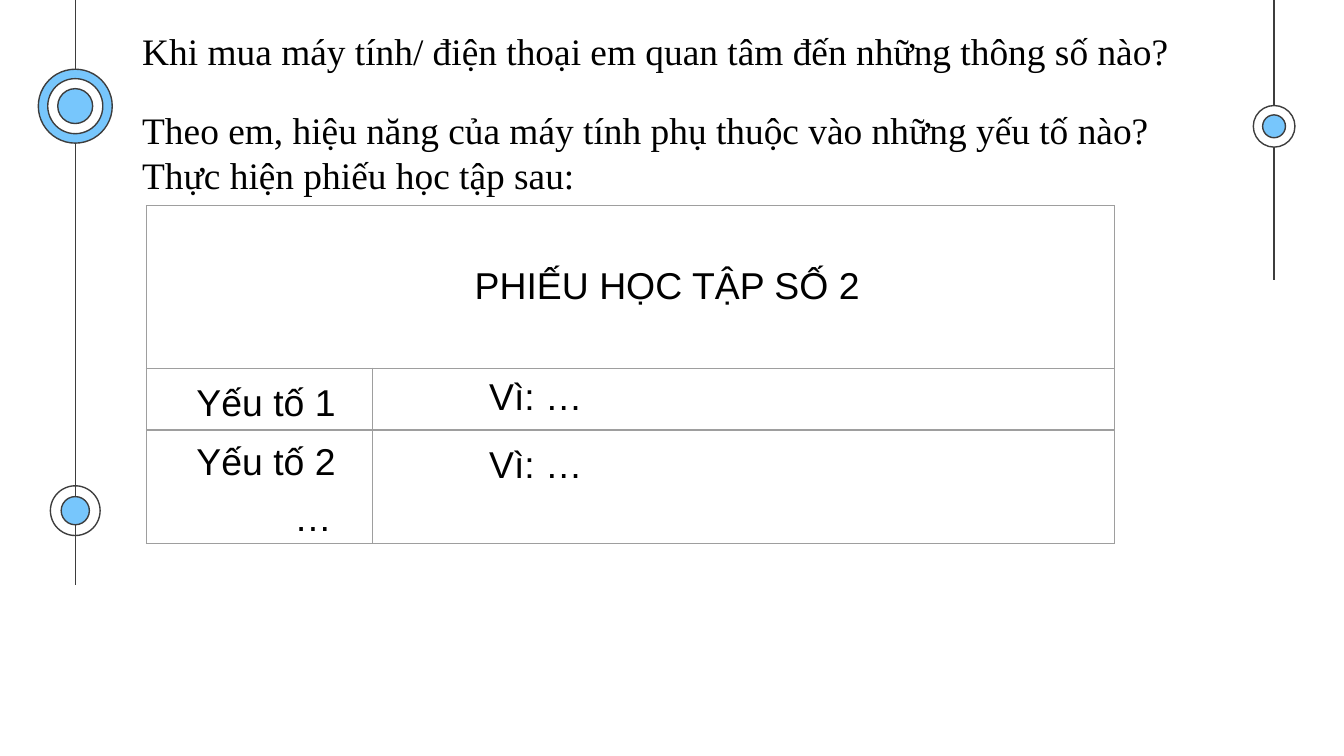
from lxml import etree
from pptx import Presentation
from pptx.dml.color import RGBColor
from pptx.enum.shapes import MSO_CONNECTOR as CONNECTOR, MSO_SHAPE as SHAPE
from pptx.enum.text import MSO_ANCHOR as ANCHOR, PP_ALIGN as ALIGN
from pptx.oxml.ns import qn
from pptx.util import Inches, Pt

INK, BLUE, WHITE, GREY = "3D3D3D", "77C6FC", "FFFFFF", "9E9E9E"


def color(value):
    return RGBColor.from_string(value)


def write(frame, text, font="Arial", align=ALIGN.LEFT, left=0, indent=0,
          spacing=None, before=0, first=True):
    """Fill the first paragraph of the frame, or append one if first is False."""
    paragraph = frame.paragraphs[0] if first else frame.add_paragraph()
    paragraph.alignment = align
    paragraph.line_spacing = spacing
    paragraph.space_before = Pt(before)
    properties = paragraph._p.get_or_add_pPr()
    properties.set("marL", str(Inches(left)))
    properties.set("indent", str(Inches(indent)))
    run = paragraph.add_run()
    run.text = text
    run.font.name = font
    run.font.size = Pt(20)
    run.font.bold = False
    run.font.color.rgb = color("000000")


prs = Presentation()
prs.slide_width = Inches(10)
prs.slide_height = Inches(10 * 9 / 16)
slide = prs.slides.add_slide(prs.slide_layouts[6])
shapes = slide.shapes

# Vertical rails
for x, bottom in [(0.56, 4.35), (9.48, 2.08)]:
    rail = shapes.add_connector(CONNECTOR.STRAIGHT, Inches(x), 0, Inches(x), Inches(bottom))
    rail.line.color.rgb = color(INK)
    rail.line.width = Pt(0.75)
    etree.SubElement(rail._element.spPr, qn("a:effectLst"))

# Concentric rings: centre x, centre y, then (diameter, fill) from the outside in
targets = [
    (0.56, 3.8, [(0.37, None), (0.21, BLUE)]),
    (9.48, 0.94, [(0.31, WHITE), (0.17, BLUE)]),
    (0.56, 0.79, [(0.55, BLUE), (0.41, WHITE), (0.26, BLUE)]),
]
for x, y, rings in targets:
    for size, fill in rings:
        ring = shapes.add_shape(SHAPE.OVAL, Inches(x - size / 2), Inches(y - size / 2),
                                Inches(size), Inches(size))
        ring.shadow.inherit = False
        ring.line.color.rgb = color(INK)
        ring.line.width = Pt(0.75)
        if fill:
            ring.fill.solid()
            ring.fill.fore_color.rgb = color(fill)
        else:
            ring.fill.background()

# Questions
questions = [
    (0.16, 8.44, 0.44, ["Khi mua máy tính/ điện thoại em quan tâm đến những thông số nào?"]),
    (0.75, 7.96, 0.77, ["Theo em, hiệu năng của máy tính phụ thuộc vào những yếu tố nào?",
                        "Thực hiện phiếu học tập sau:"]),
]
for top, width, height, lines in questions:
    question = shapes.add_textbox(Inches(0.96), Inches(top), Inches(width), Inches(height))
    question.text_frame.word_wrap = True
    for i, line in enumerate(lines):
        write(question.text_frame, line, font="Times New Roman", first=i == 0)

# Worksheet
widths, heights = [1.68, 5.52], [1.21, 0.46, 0.84]
worksheet = shapes.add_table(3, 2, Inches(1.09), Inches(1.53),
                             Inches(sum(widths)), Inches(sum(heights))).table
worksheet.first_row = worksheet.horz_banding = False
for column, width in zip(worksheet.columns, widths):
    column.width = Inches(width)
for row, height in zip(worksheet.rows, heights):
    row.height = Inches(height)

for cell in worksheet.iter_cells():
    cell.margin_left = cell.margin_right = Inches(0.07)
    cell.margin_top = cell.margin_bottom = 0
    cell.vertical_anchor = ANCHOR.MIDDLE
    properties = cell._tc.get_or_add_tcPr()
    for side in ("lnL", "lnR", "lnT", "lnB"):
        border = etree.SubElement(properties, qn(f"a:{side}"), w=str(Pt(0.75)))
        border_fill = etree.SubElement(border, qn("a:solidFill"))
        etree.SubElement(border_fill, qn("a:srgbClr"), val=GREY)
    cell.fill.background()

heading = worksheet.cell(0, 0)
heading.merge(worksheet.cell(0, 1))
write(heading.text_frame, "PHIẾU HỌC TẬP SỐ 2", align=ALIGN.CENTER, left=0.5, indent=0.05)

for number in (1, 2):
    factor, reason = worksheet.cell(number, 0), worksheet.cell(number, 1)
    write(factor.text_frame, f"Yếu tố {number}", align=ALIGN.CENTER,
          left=0.5, indent=-0.4, spacing=1.2)
    write(reason.text_frame, "Vì: …", left=0.5, indent=0.3, spacing=1.2)
    reason.vertical_anchor = ANCHOR.TOP
reason.margin_top = Inches(0.05)
write(factor.text_frame, "…", align=ALIGN.CENTER, left=0.5, indent=0.3,
      spacing=1.2, before=3, first=False)

prs.save("out.pptx")
